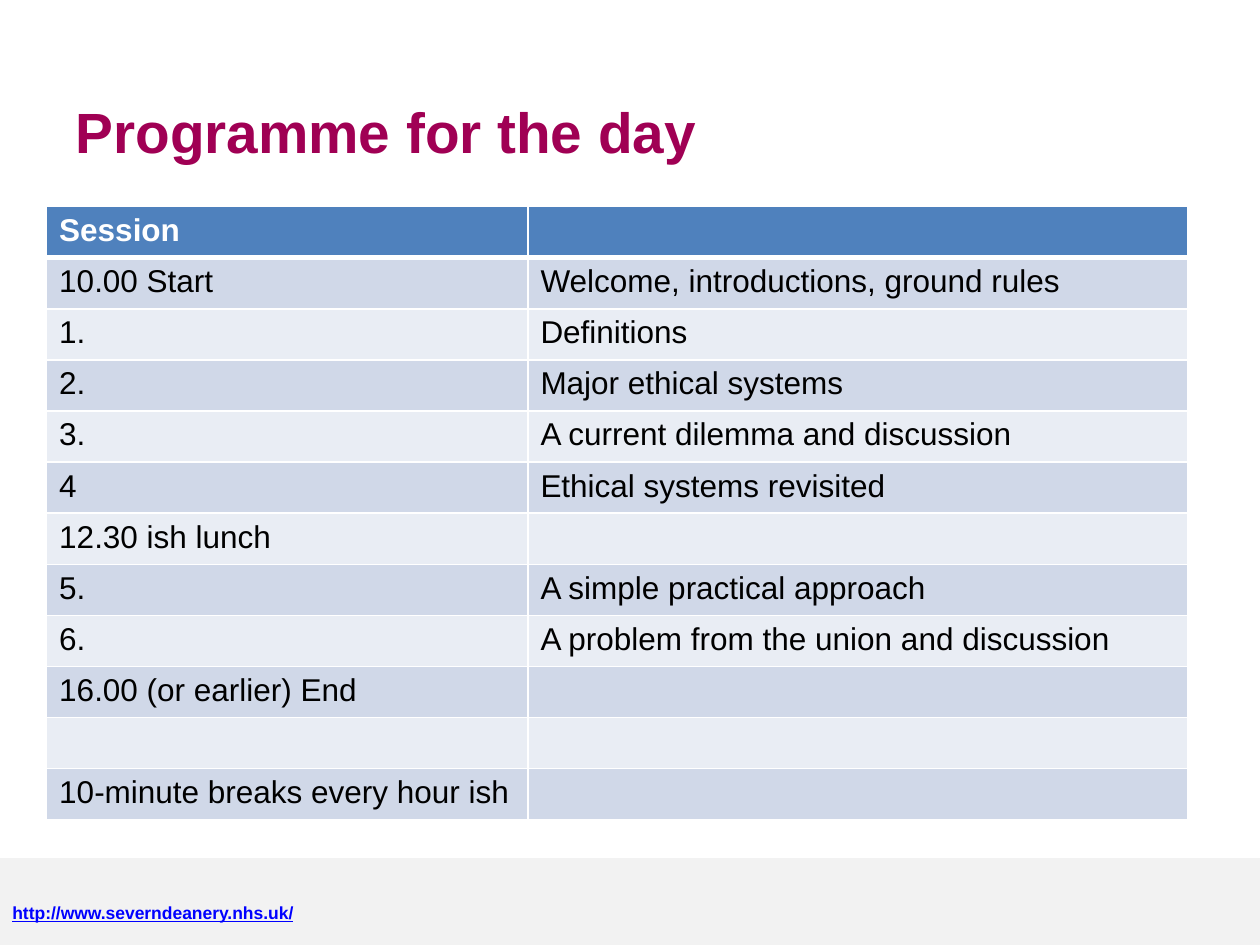
from typing import NamedTuple

from lxml import etree
from pptx import Presentation
from pptx.dml.color import RGBColor
from pptx.enum.shapes import MSO_SHAPE
from pptx.enum.text import MSO_ANCHOR, PP_ALIGN
from pptx.oxml.ns import qn
from pptx.util import Inches, Pt

RECTANGLE = MSO_SHAPE.RECTANGLE
TOP, MIDDLE = MSO_ANCHOR.TOP, MSO_ANCHOR.MIDDLE
LEFT = PP_ALIGN.LEFT
TITLE_ONLY = 5
FONT = "Arial"

COLORS = {
    "title": "A00054",
    "header": "4F81BD",
    "odd_row": "D0D8E8",
    "even_row": "E9EDF4",
    "white": "FFFFFF",
    "text": "000000",
    "footer": "F2F2F2",
    "link": "0000FF",
}


class Session(NamedTuple):
    slot: str
    topic: str = ""


PROGRAMME = [
    Session("Session"),
    Session("10.00 Start", "Welcome, introductions, ground rules"),
    Session("1.", "Definitions"),
    Session("2.", "Major ethical systems"),
    Session("3.", "A current dilemma and discussion"),
    Session("4", "Ethical systems revisited"),
    Session("12.30 ish lunch"),
    Session("5.", "A simple practical approach"),
    Session("6.", "A problem from the union and discussion"),
    Session("16.00 (or earlier) End"),
    Session(""),
    Session("10-minute breaks every hour ish"),
]
COLUMN_WIDTHS = (3.82, 5.24)
TABLE_HEIGHT = 4.87


def rgb(name: str) -> RGBColor:
    return RGBColor.from_string(COLORS[name])


def set_text(frame, text: str, size: float, color: str,
             bold: bool = False, underline: bool = False) -> None:
    frame.text = text
    paragraph = frame.paragraphs[0]
    paragraph.alignment = LEFT
    for run in paragraph.runs:
        run.font.name = FONT
        run.font.size = Pt(size)
        run.font.bold = bold
        run.font.underline = underline
        run.font.color.rgb = rgb(color)


def set_borders(cell, bottom_width: float, top_width: float) -> None:
    """Draw white cell borders, placed before the fill as the schema requires."""
    properties = cell._tc.get_or_add_tcPr()
    widths = {"lnL": 1, "lnR": 1, "lnT": top_width, "lnB": bottom_width}
    for position, (tag, width) in enumerate(widths.items()):
        line = etree.Element(qn(f"a:{tag}"), w=str(Pt(width)))
        fill = etree.SubElement(line, qn("a:solidFill"))
        etree.SubElement(fill, qn("a:srgbClr"), val=COLORS["white"])
        properties.insert(position, line)


def add_title(slide) -> None:
    title = slide.shapes.title
    title.left, title.top = Inches(0.5), Inches(0.72)
    title.width, title.height = Inches(8.5), Inches(0.74)
    title.text_frame.vertical_anchor = TOP
    set_text(title.text_frame, "Programme for the day", 32.4, "title", bold=True)


def add_programme(slide) -> None:
    table = slide.shapes.add_table(
        len(PROGRAMME), len(COLUMN_WIDTHS), Inches(0.37), Inches(1.64),
        Inches(sum(COLUMN_WIDTHS)), Inches(TABLE_HEIGHT)).table
    for column, width in zip(table.columns, COLUMN_WIDTHS):
        column.width = Inches(width)
    for index, session in enumerate(PROGRAMME):
        is_header = index == 0
        band = "header" if is_header else "odd_row" if index % 2 else "even_row"
        for cell, text in zip(table.rows[index].cells, session):
            cell.fill.solid()
            cell.fill.fore_color.rgb = rgb(band)
            set_borders(cell, 3 if is_header else 1, 3 if index == 1 else 1)
            set_text(cell.text_frame, text, 18,
                     "white" if is_header else "text", bold=is_header)


def add_footer(slide) -> None:
    footer = slide.shapes.add_shape(
        RECTANGLE, 0, Inches(6.81), Inches(10), Inches(0.69))
    footer.shadow.inherit = False
    footer.fill.solid()
    footer.fill.fore_color.rgb = rgb("footer")
    footer.line.fill.background()
    footer.text_frame.vertical_anchor = MIDDLE
    footer.text_frame.margin_top = Inches(0.22)
    set_text(footer.text_frame, "http://www.severndeanery.nhs.uk/", 10, "link",
             bold=True, underline=True)


def main() -> None:
    presentation = Presentation()
    presentation.slide_width, presentation.slide_height = Inches(10), Inches(7.5)
    slide = presentation.slides.add_slide(presentation.slide_layouts[TITLE_ONLY])
    add_footer(slide)
    add_title(slide)
    add_programme(slide)
    presentation.save("out.pptx")


if __name__ == "__main__":
    main()
